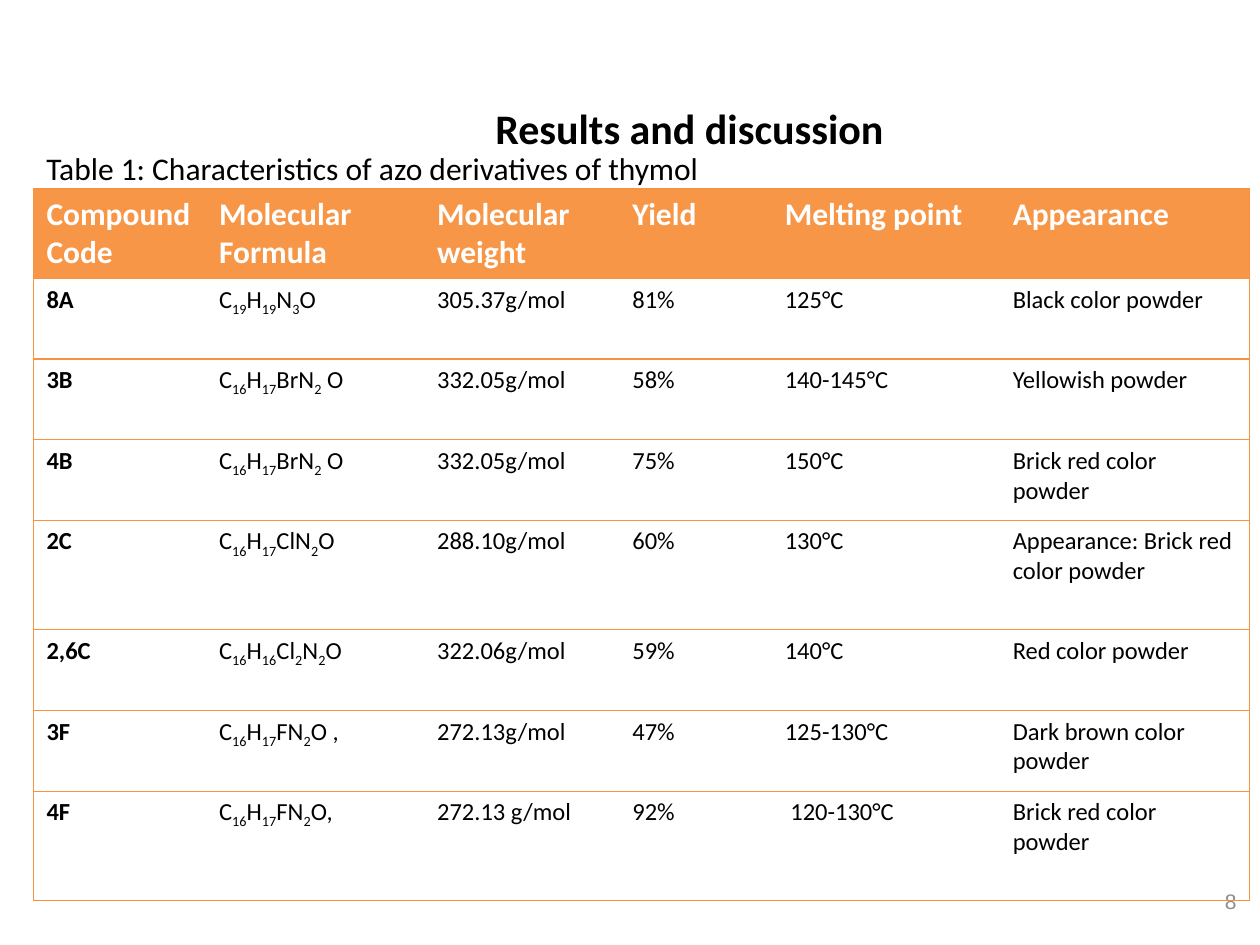
from dataclasses import dataclass
from itertools import groupby

from lxml.etree import SubElement
from pptx import Presentation
from pptx.dml.color import RGBColor
from pptx.enum.text import MSO_ANCHOR, MSO_AUTO_SIZE, PP_ALIGN
from pptx.oxml.ns import qn
from pptx.util import Pt


@dataclass(frozen=True)
class Theme:
    font: str = "Calibri"
    number_font: str = "Arial"
    text: str = "000000"
    header_text: str = "FFFFFF"
    header_fill: str = "F79646"
    rule: str = "F69240"
    muted: str = "8C8C8C"
    title_size: float = 24
    heading_size: float = 18
    body_size: float = 14
    number_size: float = 12
    rule_width: float = 0.75


@dataclass(frozen=True)
class Compound:
    code: str
    formula: str
    weight: str
    melt_yield: str
    melting_point: str
    appearance: str
    height: float = 46.1


THEME = Theme()
NO_STYLE_ID = "{2D5ABB26-0587-4C30-8999-92F81FD0307C}"
HEADINGS = ("Compound Code", "Molecular Formula", "Molecular weight",
            "Yield", "Melting point", "Appearance")
COLUMN_WIDTHS = (98.6, 124.6, 111.6, 87.1, 130.3, 142.6)
HEADER_HEIGHT = 51.1
TALL_ROW = 62.6
COMPOUNDS = (
    Compound("8A", "C19H19N3O", "305.37g/mol", "81%", "125°C", "Black color powder"),
    Compound("3B", "C16H17BrN2 O", "332.05g/mol", "58%", "140-145°C", "Yellowish powder"),
    Compound("4B", "C16H17BrN2 O", "332.05g/mol", "75%", "150°C", "Brick red color powder"),
    Compound("2C", "C16H17ClN2O", "288.10g/mol", "60%", "130°C",
             "Appearance: Brick red color powder", TALL_ROW),
    Compound("2,6C", "C16H16Cl2N2O", "322.06g/mol", "59%", "140°C", "Red color powder"),
    Compound("3F", "C16H17FN2O ,", "272.13g/mol", "47%", "125-130°C",
             "Dark brown color powder"),
    Compound("4F", "C16H17FN2O,", "272.13 g/mol", "92%", " 120-130°C",
             "Brick red color powder", TALL_ROW),
)


def add_run(paragraph, text: str, size: float, color: str = THEME.text,
            bold: bool = False, font: str = THEME.font):
    run = paragraph.add_run()
    run.text = text
    run.font.name = font
    run.font.size = Pt(size)
    run.font.bold = bold
    run.font.color.rgb = RGBColor.from_string(color)
    return run


def add_formula(paragraph, formula: str) -> None:
    """Add a chemical formula with its digits as subscripts."""
    for is_count, letters in groupby(formula, str.isdigit):
        run = add_run(paragraph, "".join(letters), THEME.body_size)
        if is_count:
            run._r.get_or_add_rPr().set("baseline", "-25000")


def add_text_box(slide, left: float, top: float, width: float, height: float):
    """Add an empty wrapping text box and return its text frame."""
    shape = slide.shapes.add_textbox(Pt(left), Pt(top), Pt(width), Pt(height))
    shape.text_frame.word_wrap = True
    return shape.text_frame


def set_borders(cell, sides: list[str]) -> None:
    """Draw the given sides, named by tag in the order lnL, lnR, lnT, lnB."""
    properties = cell._tc.get_or_add_tcPr()
    for position, side in enumerate(sides):
        line = SubElement(properties, qn(f"a:{side}"), w=str(Pt(THEME.rule_width)))
        fill = SubElement(line, qn("a:solidFill"))
        SubElement(fill, qn("a:srgbClr"), val=THEME.rule)
        properties.insert(position, line)


def add_title(slide) -> None:
    title = slide.shapes.title
    title.left, title.top, title.width, title.height = Pt(275.8), Pt(54.7), Pt(440), Pt(36)
    frame = title.text_frame
    frame.auto_size = MSO_AUTO_SIZE.NONE
    frame.vertical_anchor = MSO_ANCHOR.TOP
    paragraph = frame.paragraphs[0]
    paragraph.alignment = PP_ALIGN.LEFT
    add_run(paragraph, "Results and discussion", THEME.title_size, bold=True)


def add_compound_table(slide) -> None:
    heights = [HEADER_HEIGHT] + [compound.height for compound in COMPOUNDS]
    table = slide.shapes.add_table(
        len(heights), len(HEADINGS), Pt(19.4), Pt(108),
        Pt(sum(COLUMN_WIDTHS)), Pt(sum(heights))).table
    table.first_row = True
    table.horz_banding = False
    table._tbl.tblPr.find(qn("a:tableStyleId")).text = NO_STYLE_ID
    for column, width in zip(table.columns, COLUMN_WIDTHS):
        column.width = Pt(width)
    for row, height in zip(table.rows, heights):
        row.height = Pt(height)

    for index, heading in enumerate(HEADINGS):
        cell = table.cell(0, index)
        cell.fill.solid()
        cell.fill.fore_color.rgb = RGBColor.from_string(THEME.header_fill)
        add_run(cell.text_frame.paragraphs[0], heading, THEME.heading_size,
                THEME.header_text, bold=True)

    for row_index, compound in enumerate(COMPOUNDS, start=1):
        values = (compound.code, compound.formula, compound.weight,
                  compound.melt_yield, compound.melting_point, compound.appearance)
        for index, value in enumerate(values):
            cell = table.cell(row_index, index)
            cell.fill.background()
            paragraph = cell.text_frame.paragraphs[0]
            if index == 1:
                add_formula(paragraph, value)
            else:
                add_run(paragraph, value, THEME.body_size, bold=index == 0)

    for row in table.rows:
        for index, cell in enumerate(row.cells):
            outer = {0: ["lnL"], len(HEADINGS) - 1: ["lnR"]}.get(index, [])
            set_borders(cell, outer + ["lnT", "lnB"])


def add_caption(slide) -> None:
    frame = add_text_box(slide, 19.4, 81.4, 558, 28.8)
    add_run(frame.paragraphs[0], "Table 1: Characteristics of azo derivatives of thymol",
            THEME.heading_size)


def add_slide_number(slide) -> None:
    frame = add_text_box(slide, 545.8, 500.4, 167.8, 28.8)
    frame.vertical_anchor = MSO_ANCHOR.MIDDLE
    paragraph = frame.paragraphs[0]
    paragraph.alignment = PP_ALIGN.RIGHT
    add_run(paragraph, "8", THEME.number_size, THEME.muted, font=THEME.number_font)


def main() -> None:
    presentation = Presentation()
    presentation.slide_width, presentation.slide_height = Pt(720), Pt(540)
    slide = presentation.slides.add_slide(presentation.slide_layouts[5])
    add_slide_number(slide)
    add_title(slide)
    add_compound_table(slide)
    add_caption(slide)
    presentation.save("out.pptx")


if __name__ == "__main__":
    main()
